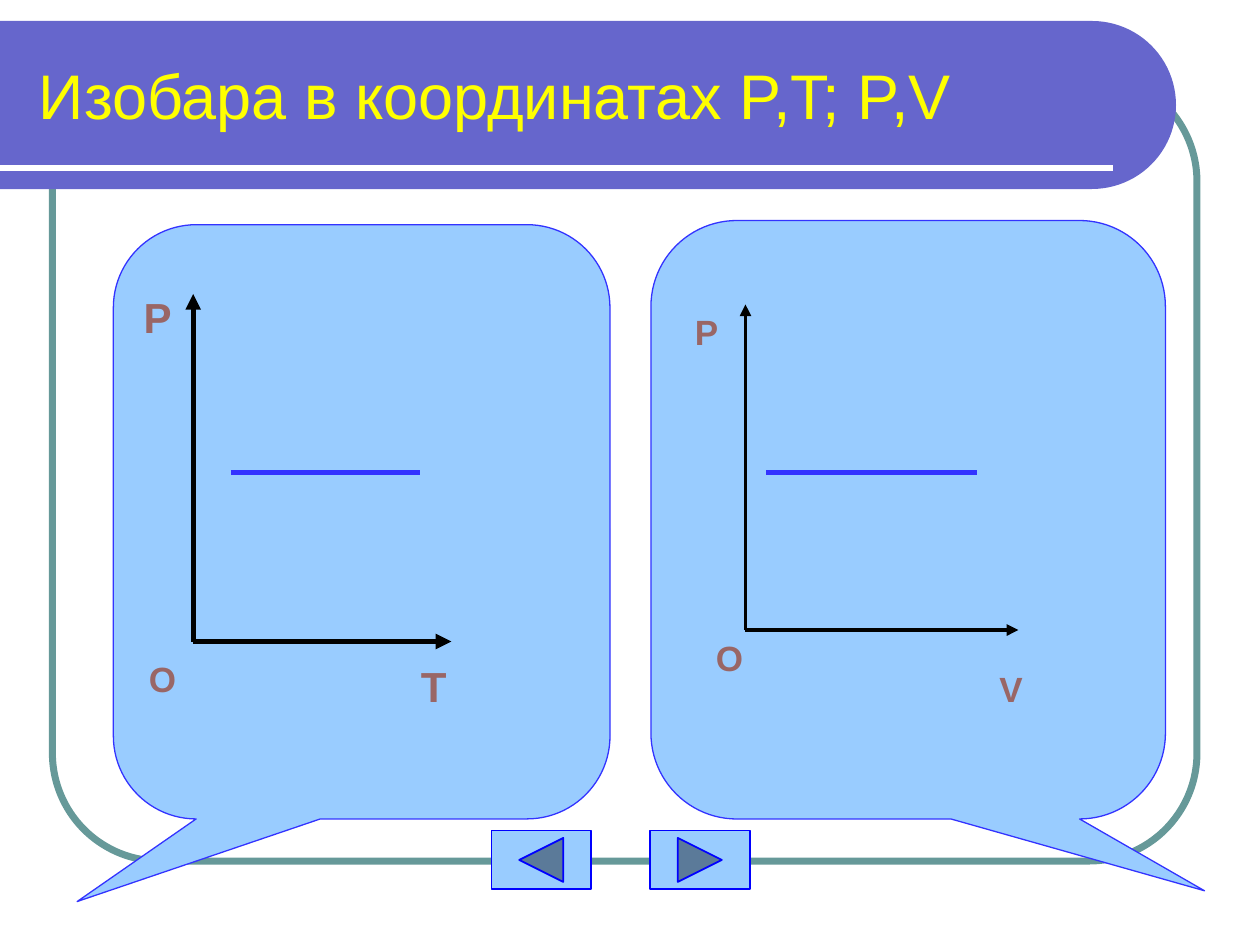
from math import cos, pi, sin

from lxml.etree import SubElement
from pptx import Presentation
from pptx.dml.color import RGBColor
from pptx.enum.shapes import MSO_CONNECTOR, MSO_SHAPE
from pptx.enum.text import MSO_ANCHOR, PP_ALIGN
from pptx.oxml.ns import qn
from pptx.util import Inches, Pt

deck = Presentation()
deck.slide_width, deck.slide_height = Inches(10), Inches(7.5)
page = deck.slides.add_slide(deck.slide_layouts[5])
cell = deck.slide_width / 120
color = RGBColor.from_string


def add_panel(kind, place, fill, line, width, adjustments=()):
    panel = page.shapes.add_shape(kind, *[round(cell * n) for n in place])
    panel.shadow.inherit = False
    if fill:
        panel.fill.solid()
        panel.fill.fore_color.rgb = color(fill)
    else:
        panel.fill.background()
    panel.line.color.rgb = color(line)
    panel.line.width = Pt(width)
    for index, value in enumerate(adjustments):
        panel.adjustments[index] = value


def add_line(ends, line, width, arrow=False):
    connector = page.shapes.add_connector(
        MSO_CONNECTOR.STRAIGHT, *[round(cell * n) for n in ends])
    connector.line.color.rgb = color(line)
    connector.line.width = Pt(width)
    if arrow:
        SubElement(connector.line._get_or_add_ln(), qn("a:tailEnd"), type="triangle")
    SubElement(connector._element.spPr, qn("a:effectLst"))


add_panel(MSO_SHAPE.ROUNDED_RECTANGLE, (5, 7, 109, 75), None, "669999", 4, [0.137])

radius = 8
arc = [(104 + radius * cos(step * pi / 48), 10 + radius * sin(step * pi / 48))
       for step in range(-24, 25)]
outline = page.shapes.build_freeform(0, round(2 * cell))
outline.add_line_segments([(round(x * cell), round(y * cell)) for x, y in arc + [(0, 18)]])
band = outline.convert_to_shape()
band.shadow.inherit = False
band.fill.solid()
band.fill.fore_color.rgb = color("6666CC")
band.line.fill.background()
add_line((0, 16, 106, 16), "FFFFFF", 3)

title = page.shapes.title
title.left, title.top, title.width, title.height = [
    round(cell * n) for n in (2.5, 3, 105.2, 12)]
title.text_frame.text = "Изобара в координатах P,T; P,V"
title.text_frame.vertical_anchor = MSO_ANCHOR.MIDDLE
title.text_frame.word_wrap = True
para = title.text_frame.paragraphs[0]
para.alignment = PP_ALIGN.LEFT
span = para.runs[0]
span.font.name, span.font.size = "Arial", Pt(36)
span.font.color.rgb = color("FFFF00")
title.element.getparent().append(title.element)

callouts = [
    ((62, 21, 49, 57), (0.576, 0.62, 0.167)),
    ((10.8, 21.4, 47.3, 56.6), (-0.573, 0.639, 0.167)),
]
for place, adjustments in callouts:
    add_panel(MSO_SHAPE.ROUNDED_RECTANGULAR_CALLOUT, place, "99CCFF", "3333FF", 0.75, adjustments)

graphs = [
    ((18.4, 61.1), 28, 43, 3, (22, 40)),
    ((71, 60), 29, 97, 2.25, (73, 93)),
]
for (x, y), top, right, width, (start, end) in graphs:
    add_line((x, y, x, top), "000000", width, arrow=True)
    add_line((x, y, right, y), "000000", width, arrow=True)
    add_line((start, 45, end, 45), "3333FF", 3)

labels = [
    ("P", 24, (12.5, 27.2, 5, 6)),
    ("T", 24, (38.9, 62.3, 4.8, 6)),
    ("O", 20, (13, 62, 6, 5.2)),
    ("P", 20, (65, 29, 7, 5.2)),
    ("O", 20, (67, 60, 6, 5.2)),
    ("V", 20, (94, 63, 7, 5.2)),
]
for letter, size, place in labels:
    box = page.shapes.add_textbox(*[round(cell * n) for n in place])
    box.text_frame.text = letter
    box.text_frame.word_wrap = size == 20
    span = box.text_frame.paragraphs[0].runs[0]
    span.font.name, span.font.size, span.font.bold = "Arial", Pt(size), True
    span.font.color.rgb = color("996666")

for kind, left in [
    (MSO_SHAPE.ACTION_BUTTON_FORWARD_OR_NEXT, 61.9),
    (MSO_SHAPE.ACTION_BUTTON_BACK_OR_PREVIOUS, 46.8),
]:
    add_panel(kind, (left, 79.1, 9.5, 5.6), "99CCFF", "0000FF", 1)

deck.save("out.pptx")
